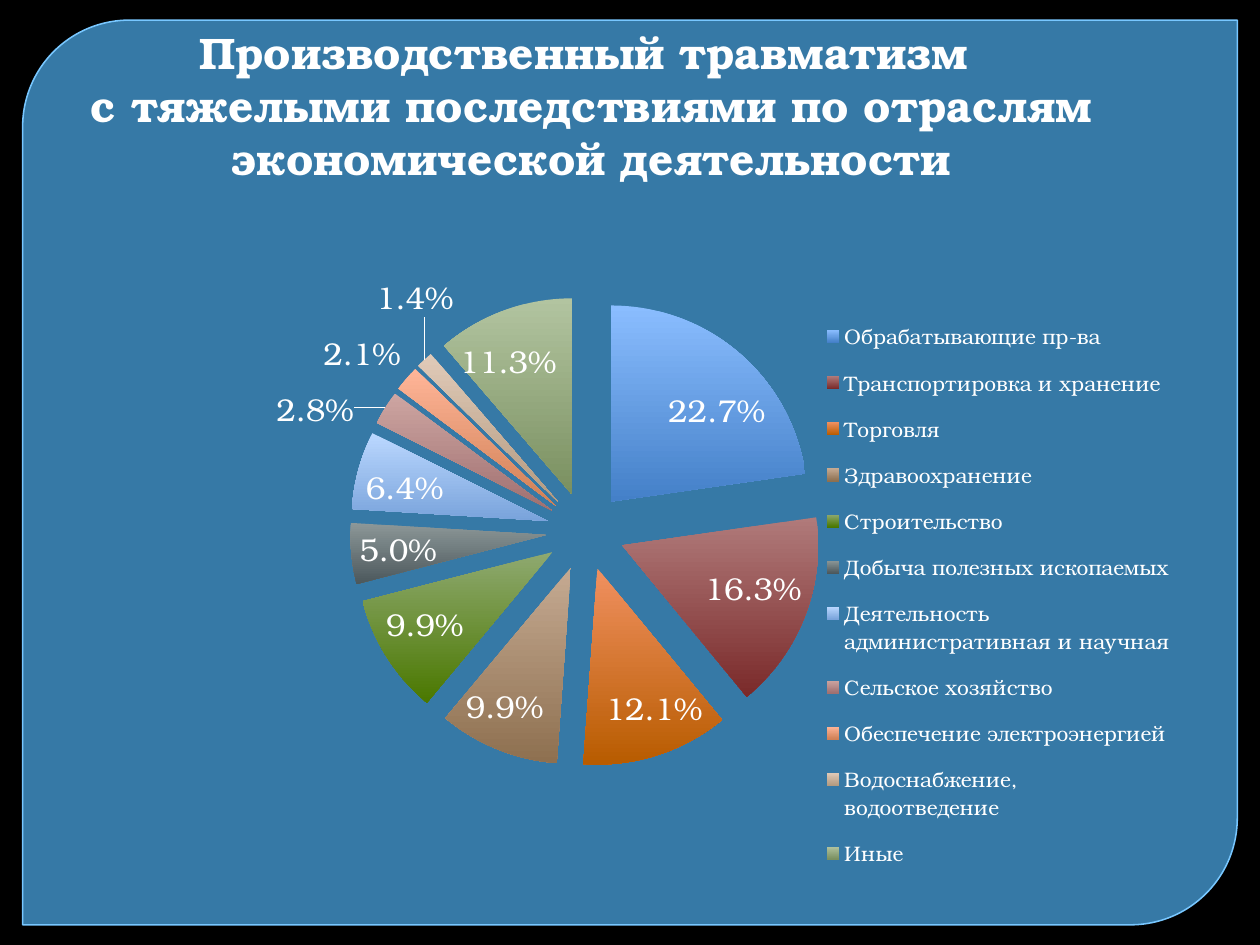
from dataclasses import dataclass

from pptx import Presentation
from pptx.chart.data import CategoryChartData
from pptx.dml.color import RGBColor
from pptx.enum.chart import XL_CHART_TYPE, XL_LABEL_POSITION, XL_LEGEND_POSITION
from pptx.enum.shapes import MSO_SHAPE
from pptx.enum.text import MSO_ANCHOR, PP_ALIGN
from pptx.oxml import parse_xml
from pptx.oxml.ns import nsdecls, qn
from pptx.util import Inches, Pt

PIE = XL_CHART_TYPE.PIE
BEST_FIT, OUTSIDE = XL_LABEL_POSITION.BEST_FIT, XL_LABEL_POSITION.OUTSIDE_END
LEGEND_RIGHT = XL_LEGEND_POSITION.RIGHT
PANEL_SHAPE = MSO_SHAPE.ROUND_2_DIAG_RECTANGLE
BOTTOM, CENTER = MSO_ANCHOR.BOTTOM, PP_ALIGN.CENTER


@dataclass(frozen=True)
class Theme:
    font: str = "TeX Gyre Bonum"
    background: str = "000000"
    panel: str = "53BBFF"
    panel_opacity: int = 65
    panel_edge: str = "78C7FF"
    text: str = "FFFFFF"
    title_size: float = 25.2
    label_size: float = 18
    legend_size: float = 12


THEME = Theme()

TITLE_LINES = (
    "Производственный травматизм ",
    "с тяжелыми последствиями по отраслям экономической деятельности",
)

# Industry, share, top and bottom colour of its slice
INDUSTRIES = (
    ("Обрабатывающие пр-ва", 0.227, "8ABDFF", "4480C8"),
    ("Транспортировка и хранение", 0.163, "B07A7A", "7A2A2A"),
    ("Торговля", 0.121, "F09060", "B85C00"),
    ("Здравоохранение", 0.099, "C5AA92", "8E7050"),
    ("Строительство", 0.099, "8FA970", "4A7800"),
    ("Добыча полезных ископаемых", 0.05, "8C9798", "4C585C"),
    ("Деятельность административная и научная", 0.064, "BBD8FF", "79A3DB"),
    ("Сельское хозяйство", 0.028, "CDA5A2", "A07070"),
    ("Обеспечение электроэнергией", 0.021, "FFB598", "D08055"),
    ("Водоснабжение, водоотведение", 0.014, "E0CAB8", "B39A80"),
    ("Иные", 0.113, "B2C4A0", "7A9060"),
)
SMALL_SHARE = 0.03
EXPLOSION = 20
# Shifts of outside labels, in percent of the chart
LABEL_SHIFTS = {7: (-2.2, 4), 9: (3, -6)}


def rgb(color):
    return RGBColor.from_string(color)


def style_font(font, size, bold=False):
    font.name, font.size, font.bold = THEME.font, Pt(size), bold
    font.color.rgb = rgb(THEME.text)


def layout_xml(**parts):
    body = "".join(f'<c:{tag} val="{value}"/>' for tag, value in parts.items())
    return parse_xml(f'<c:layout {nsdecls("c")}><c:manualLayout>{body}'
                     "</c:manualLayout></c:layout>")


def box_layout(x, y, w, h, **target):
    """Layout of a chart part, in percent of the chart."""
    return layout_xml(**target, xMode="edge", yMode="edge",
                      x=x / 100, y=y / 100, w=w / 100, h=h / 100)


def add_panel(slide, box):
    panel = slide.shapes.add_shape(PANEL_SHAPE, *box)
    panel.shadow.inherit = False
    panel.adjustments[0], panel.adjustments[1] = 0.118, 0
    panel.fill.solid()
    panel.fill.fore_color.rgb = rgb(THEME.panel)
    tint = panel._element.spPr.find(qn("a:solidFill"))[0]
    tint.append(parse_xml(
        f'<a:alpha {nsdecls("a")} val="{THEME.panel_opacity * 1000}"/>'))
    panel.line.color.rgb = rgb(THEME.panel_edge)
    panel.line.width = Pt(0.87)


def add_title(slide, box):
    frame = slide.shapes.add_textbox(*box).text_frame
    frame.word_wrap = True
    frame.vertical_anchor = BOTTOM
    frame.margin_left = Inches(0.16)
    frame.margin_bottom = Inches(0.47)
    paragraph = frame.paragraphs[0]
    paragraph.alignment = CENTER
    for number, line in enumerate(TITLE_LINES):
        if number:
            paragraph.add_line_break()
        run = paragraph.add_run()
        run.text = line
        style_font(run.font, THEME.title_size, bold=True)


def style_slice(point, top, bottom):
    fill = point.format.fill
    fill.gradient()
    fill.gradient_angle = 270
    for stop, color, position in zip(fill.gradient_stops, (top, bottom), (0, 1)):
        stop.color.rgb = rgb(color)
        stop.position = position
    point.format.line.fill.background()


def style_labels(series):
    labels = series.data_labels
    labels.show_value = True
    labels.number_format, labels.number_format_is_linked = "0.0%", False
    labels.position = BEST_FIT
    style_font(labels.font, THEME.label_size)
    # Leader lines for labels moved away from their slices
    labels._element.append(parse_xml(
        f'<c:leaderLines {nsdecls("c", "a")}><c:spPr><a:ln w="9525"><a:solidFill>'
        f'<a:srgbClr val="{THEME.text}"/></a:solidFill></a:ln></c:spPr>'
        "</c:leaderLines>"))
    for index, (_, share, _, _) in enumerate(INDUSTRIES):
        if share < SMALL_SHARE:
            label = series.points[index].data_label
            style_font(label.font, THEME.label_size)
            label.position = OUTSIDE
    for entry in labels._element.findall(qn("c:dLbl")):
        shift = LABEL_SHIFTS.get(int(entry.find(qn("c:idx")).get("val")))
        if shift:
            entry.insert(1, layout_xml(x=shift[0] / 100, y=shift[1] / 100))


def add_injury_chart(slide, box):
    data = CategoryChartData(number_format="0.0%")
    data.categories = [industry[0] for industry in INDUSTRIES]
    data.add_series("Series 1", [industry[1] for industry in INDUSTRIES])
    chart = slide.shapes.add_chart(PIE, *box, data).chart
    chart.has_title = False
    style_font(chart.font, THEME.label_size)

    # Slices
    plot = chart.plots[0]
    plot.vary_by_categories = True
    series = plot.series[0]
    series._element.find(qn("c:cat")).addprevious(
        parse_xml(f'<c:explosion {nsdecls("c")} val="{EXPLOSION}"/>'))
    for index, (_, _, top, bottom) in enumerate(INDUSTRIES):
        style_slice(series.points[index], top, bottom)
    style_labels(series)

    # Plot area
    area = chart._chartSpace.chart.plotArea
    for old in area.findall(qn("c:layout")):
        area.remove(old)
    area.insert(0, box_layout(20.2, 3.4, 52.4, 75.3, layoutTarget="inner"))

    # Legend
    chart.has_legend = True
    legend = chart.legend
    legend.position = LEGEND_RIGHT
    legend.include_in_layout = False
    style_font(legend.font, THEME.legend_size)
    entries = legend._element
    for old in entries.findall(qn("c:layout")):
        entries.remove(old)
    entries.find(qn("c:legendPos")).addnext(box_layout(67.2, 4.7, 30.5, 93))


def main():
    deck = Presentation()
    deck.slide_width, deck.slide_height = Inches(10), Inches(7.5)
    slide = deck.slides.add_slide(deck.slide_layouts[6])
    slide.background.fill.solid()
    slide.background.fill.fore_color.rgb = rgb(THEME.background)

    def share_box(x, y, w, h):
        return (int(deck.slide_width * x / 100), int(deck.slide_height * y / 100),
                int(deck.slide_width * w / 100), int(deck.slide_height * h / 100))

    # Regions, in percent of the slide
    add_panel(slide, share_box(1.8, 2.13, 96.4, 95.73))
    add_title(slide, share_box(0, 9.07, 93.3, 16.67))
    add_injury_chart(slide, share_box(4.3, 29.07, 90.9, 66.13))
    deck.save("out.pptx")


if __name__ == "__main__":
    main()
